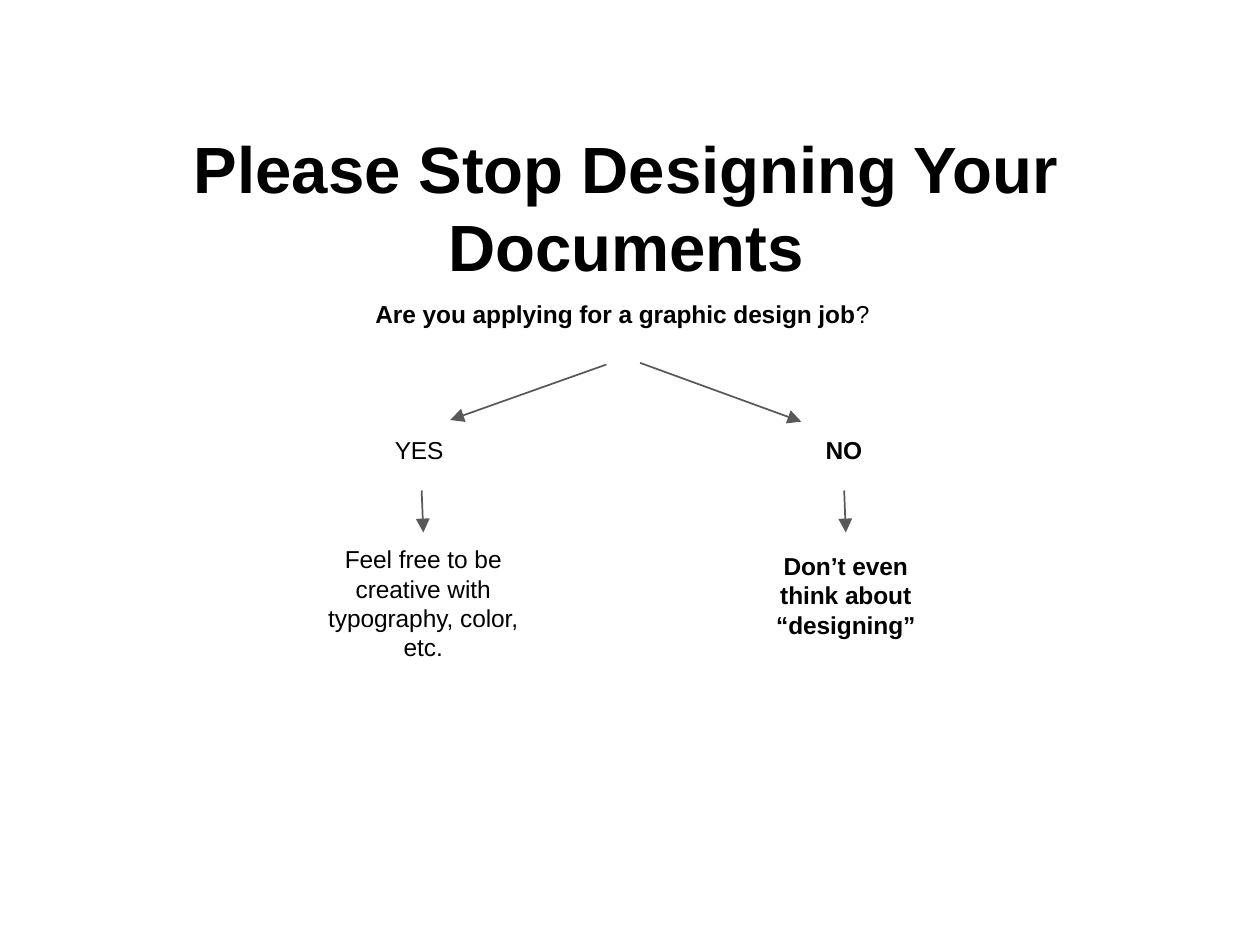
from lxml import etree
from pptx import Presentation
from pptx.dml.color import RGBColor
from pptx.enum.shapes import MSO_CONNECTOR
from pptx.enum.text import MSO_ANCHOR, MSO_AUTO_SIZE, PP_ALIGN
from pptx.oxml.ns import qn
from pptx.util import Inches, Pt

STRAIGHT = MSO_CONNECTOR.STRAIGHT
TOP = MSO_ANCHOR.TOP
NO_AUTOFIT = MSO_AUTO_SIZE.NONE
LEFT, CENTER = PP_ALIGN.LEFT, PP_ALIGN.CENTER
BLACK = RGBColor(0x00, 0x00, 0x00)
WHITE = RGBColor(0xFF, 0xFF, 0xFF)
GRAY = RGBColor(0x59, 0x59, 0x59)
FONT = "Arial"
TITLE_SIZE, BODY_SIZE = 28, 10.5
SLIDE_WIDTH = 7.5
INSET = Inches(0.07)


def write_text(shape, parts, size, alignment):
    """Fill a shape with (text, bold) runs in one paragraph."""
    frame = shape.text_frame
    frame.word_wrap = True
    frame.auto_size = NO_AUTOFIT
    frame.vertical_anchor = TOP
    frame.margin_left = frame.margin_right = INSET
    frame.margin_top = frame.margin_bottom = INSET
    paragraph = frame.paragraphs[0]
    paragraph.alignment = alignment
    paragraph.line_spacing = 1.0
    for text, bold in parts:
        run = paragraph.add_run()
        run.text = text
        run.font.name = FONT
        run.font.size = Pt(size)
        run.font.bold = bold
        run.font.color.rgb = BLACK


def add_label(slide, box, parts, alignment=CENTER):
    """Add a body text box at (left, top, width, height) and return it."""
    label = slide.shapes.add_textbox(*map(Inches, box))
    write_text(label, parts, BODY_SIZE, alignment)
    return label


def add_arrow(slide, start, end):
    """Add a thin gray arrow between two points and return it."""
    arrow = slide.shapes.add_connector(STRAIGHT, *map(Inches, start + end))
    arrow.line.color.rgb = GRAY
    arrow.line.width = Pt(0.75)
    line = arrow._element.spPr.find(qn("a:ln"))
    etree.SubElement(line, qn("a:tailEnd"), type="triangle")
    etree.SubElement(arrow._element.spPr, qn("a:effectLst"))
    return arrow


def add_title(slide, box):
    """Place the slide title in its box."""
    title = slide.shapes.title
    title.left, title.top, title.width, title.height = map(Inches, box)
    write_text(title, [("Please Stop Designing Your Documents", True)], TITLE_SIZE, CENTER)


def add_question(slide, box):
    """Add the question and the two arrows leading from it to the answers."""
    left, top = box[:2]
    add_label(slide, box, [("Are you applying for a graphic design job", True), ("? ", False)])
    add_arrow(slide, (left + 1.76, top + 0.46), (left + 0.83, top + 0.79))
    add_arrow(slide, (left + 1.96, top + 0.45), (left + 2.92, top + 0.8))


def add_branch(slide, box, answer, answer_width, advice, bold):
    """Add an answer above its advice box, with an arrow between them."""
    left, top, width, height = box
    middle = left + width / 2
    answer_top, arrow_top, arrow_end = 2.52, 2.92, 3.17
    answer_box = (middle - answer_width / 2, answer_top, answer_width, 0.27)
    add_label(slide, answer_box, [(answer, bold)], LEFT)
    advice_label = add_label(slide, box, [(advice, bold)])
    arrow = add_arrow(slide, (middle - 0.01, arrow_top), (middle, arrow_end))
    if top == arrow_end:
        arrow.end_connect(advice_label, 0)


def main():
    """Build the decision slide and save it."""
    presentation = Presentation()
    presentation.slide_width = Inches(SLIDE_WIDTH)
    presentation.slide_height = Inches(SLIDE_WIDTH * 3 / 4)
    slide = presentation.slides.add_slide(presentation.slide_layouts[5])
    slide.background.fill.solid()
    slide.background.fill.fore_color.rgb = WHITE
    add_title(slide, (0.23, 0.69, 6.99, 0.47))
    add_question(slide, (1.85, 1.71, 3.75, 0.4))
    add_branch(slide, (1.85, 3.17, 1.34, 0.98), "YES", 0.48,
               "Feel free to be creative with typography, color, etc.", False)
    add_branch(slide, (4.47, 3.21, 1.13, 0.85), "NO", 0.38,
               "Don’t even think about “designing”", True)
    presentation.save("out.pptx")


if __name__ == "__main__":
    main()
